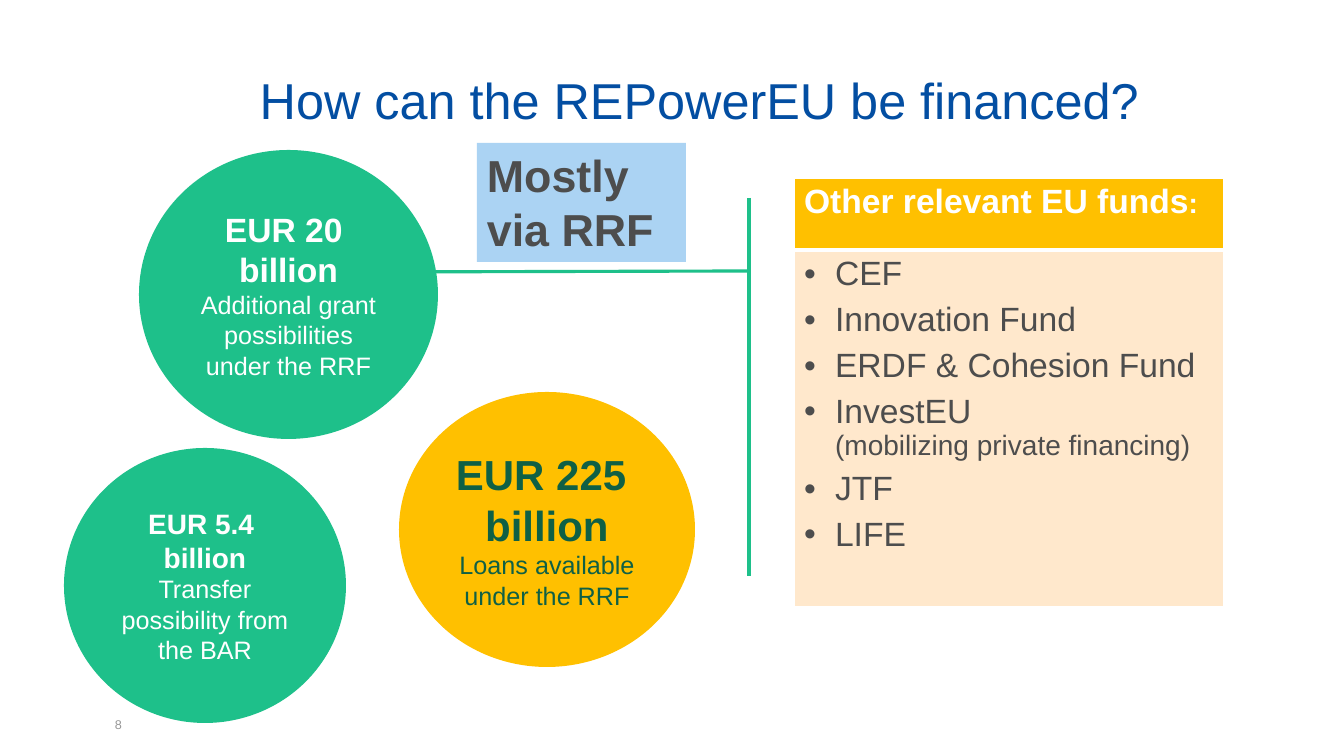
from lxml.etree import SubElement
from pptx import Presentation
from pptx.dml.color import RGBColor
from pptx.enum.shapes import MSO_CONNECTOR, MSO_SHAPE
from pptx.enum.text import MSO_ANCHOR, PP_ALIGN
from pptx.oxml.ns import qn
from pptx.util import Emu, Pt

EMU_PER_PX = 914400 / 100.8
BLUE, GREEN, YELLOW, WHITE = "034EA2", "1EC08A", "FFC000", "FFFFFF"
DARK_GREEN, GREY = "0F6045", "4D4D4D"
FUNDS = [("CEF", ""), ("Innovation Fund", ""), ("ERDF & Cohesion Fund", ""),
         ("InvestEU", "(mobilizing private financing)"), ("JTF", ""), ("LIFE", "")]


def px(n):
    return Emu(round(n * EMU_PER_PX))


def box(*lengths):
    return [px(n) for n in lengths]


def rgb(value):
    return RGBColor.from_string(value)


def set_font(target, size, color, bold=False):
    font = target.font
    font.name = "Arial"
    font.size = Pt(size)
    font.bold = bold
    font.color.rgb = rgb(color)


def add_line(s, x1, y1, x2, y2):
    line = s.shapes.add_connector(MSO_CONNECTOR.STRAIGHT, *box(x1, y1, x2, y2))
    line.line.color.rgb = rgb(GREEN)
    line.line.width = Pt(2.25)
    SubElement(line._element.spPr, qn("a:effectLst"))


def add_filled(s, kind, bounds, fill):
    sp = s.shapes.add_shape(kind, *box(*bounds))
    sp.shadow.inherit = False
    sp.fill.solid()
    sp.fill.fore_color.rgb = rgb(fill)
    sp.line.fill.background()
    return sp


def add_circle(s, bounds, fill, color, amount, size, caption):
    tf = add_filled(s, MSO_SHAPE.OVAL, bounds, fill).text_frame
    tf.vertical_anchor = MSO_ANCHOR.MIDDLE
    tf.text = f"{amount}\nbillion\n{caption}"
    for p, points in zip(tf.paragraphs, (size, size, 18)):
        p.alignment = PP_ALIGN.CENTER
        set_font(p, points, color, bold=points == size)


def add_label(s, bounds, fill, text):
    tf = add_filled(s, MSO_SHAPE.RECTANGLE, bounds, fill).text_frame
    tf.vertical_anchor = MSO_ANCHOR.TOP
    tf.text = text
    p = tf.paragraphs[0]
    p.alignment = PP_ALIGN.LEFT
    set_font(p, 32, GREY, bold=True)


def add_bullet(p):
    pPr = p._p.get_or_add_pPr()
    pPr.set("marL", str(px(31)))
    pPr.set("indent", str(-px(31)))
    SubElement(pPr, qn("a:buFont")).set("typeface", "Arial")
    SubElement(pPr, qn("a:buChar")).set("char", "•")


def add_run(p, text, size, color, bold=False):
    r = p.add_run()
    r.text = text
    set_font(r, size, color, bold)


def style_cell(cell, fill, bottom_width):
    tcPr = cell._tc.get_or_add_tcPr()
    for side, width in (("L", 1), ("R", 1), ("T", 1), ("B", bottom_width)):
        ln = SubElement(tcPr, qn(f"a:ln{side}"), w=str(Pt(width)))
        SubElement(SubElement(ln, qn("a:solidFill")), qn("a:srgbClr"), val=WHITE)
    cell.fill.solid()
    cell.fill.fore_color.rgb = rgb(fill)


def add_funds_table(s):
    table = s.shapes.add_table(2, 1, *box(794, 178, 430, 429)).table
    table.rows[0].height, table.rows[1].height = box(72, 357)
    header, body = table.cell(0, 0), table.cell(1, 0)
    style_cell(header, YELLOW, 3)
    style_cell(body, "FFE8CC", 1)
    p = header.text_frame.paragraphs[0]
    add_run(p, "Other relevant EU funds", 24, WHITE, bold=True)
    add_run(p, ":", 20, WHITE, bold=True)
    tf = body.text_frame
    for i, (fund, detail) in enumerate(FUNDS):
        p = tf.add_paragraph() if i else tf.paragraphs[0]
        p.space_after = Pt(6)
        add_bullet(p)
        add_run(p, fund, 24, GREY)
        if detail:
            p.add_line_break()
            add_run(p, detail, 20, GREY)


def set_title(s, text):
    title = s.shapes.title
    title.left, title.top, title.width, title.height = box(105, 43, 1189, 87)
    tf = title.text_frame
    tf.vertical_anchor = MSO_ANCHOR.BOTTOM
    tf.margin_bottom = 0
    tf.text = text
    p = tf.paragraphs[0]
    p.alignment = PP_ALIGN.CENTER
    p.line_spacing = 0.9
    set_font(p, 36, BLUE)


def add_page_number(s, number):
    tf = s.shapes.add_textbox(*box(105, 704, 290, 40)).text_frame
    tf.word_wrap = True
    tf.vertical_anchor = MSO_ANCHOR.MIDDLE
    tf.text = number
    set_font(tf.paragraphs[0], 9, "979797")


def main():
    prs = Presentation()
    prs.slide_width, prs.slide_height = box(1344, 756)
    s = prs.slides.add_slide(prs.slide_layouts[5])
    add_page_number(s, "8")
    set_title(s, "How can the REPowerEU be financed?")
    add_line(s, 749, 198, 749, 576)
    add_circle(s, (399, 392, 296, 275), YELLOW, DARK_GREEN, "EUR 225 ", 30,
               "Loans available under the RRF")
    add_circle(s, (139, 150, 299, 289), GREEN, WHITE, "EUR 20 ", 24,
               "Additional grant possibilities under the RRF")
    add_line(s, 377, 272, 749, 271)
    add_circle(s, (64, 448, 282, 275), GREEN, WHITE, "EUR 5.4 ", 20,
               "Transfer possibility from the BAR")
    add_funds_table(s)
    add_label(s, (477, 143, 209, 119), "ABD3F3", "Mostly via RRF")
    prs.save("out.pptx")


if __name__ == "__main__":
    main()
